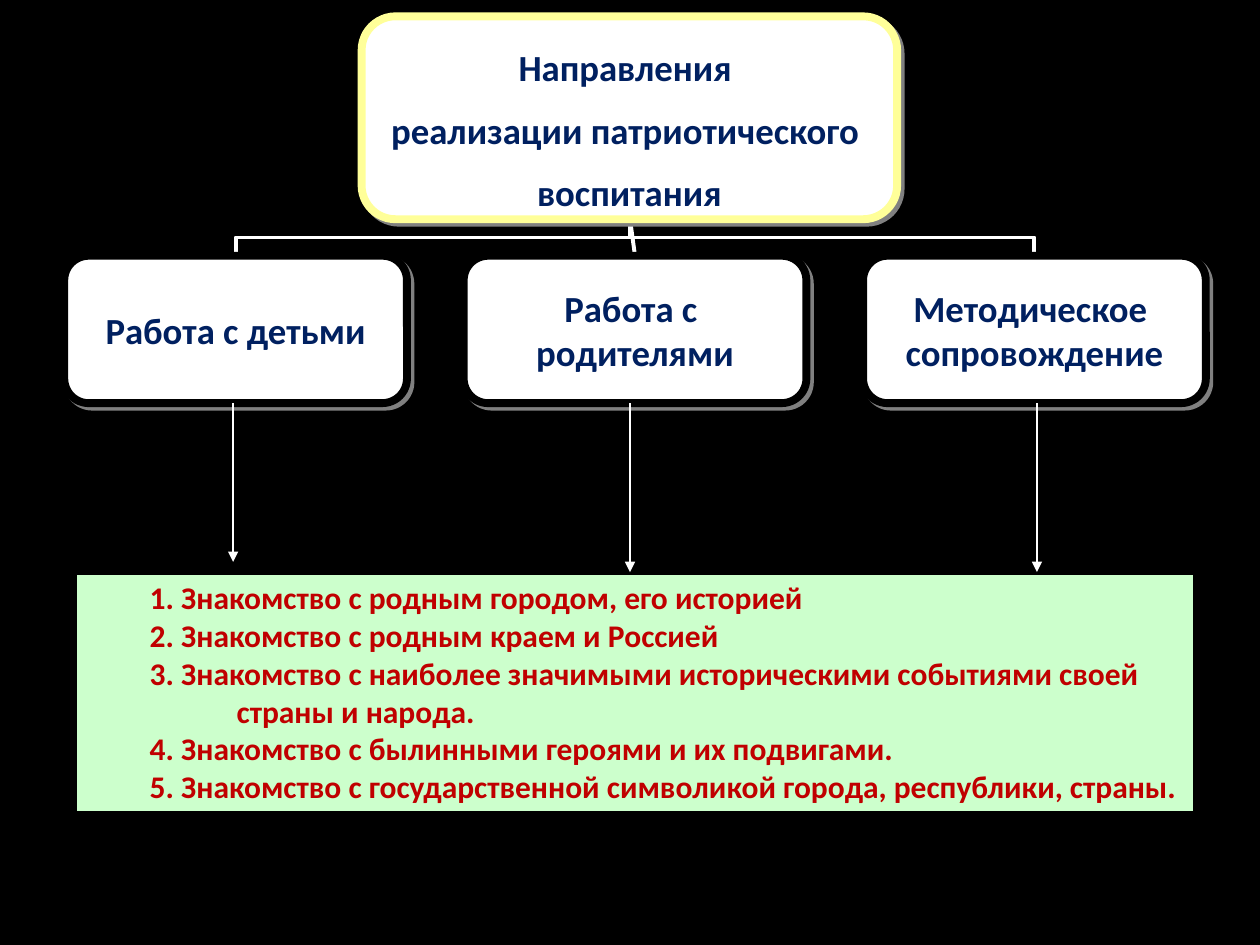
import pptx
import pptx.util
import pptx.dml.color
import pptx.enum.shapes
import pptx.enum.text
import pptx.oxml
import pptx.oxml.ns
from lxml import etree

# Content
TITLE = ["Направления ", "реализации патриотического ", "воспитания"]
BRANCHES = [
    ["Работа с детьми"],
    ["Работа с ", "родителями"],
    ["Методическое ", "сопровождение"],
]
TASKS = [
    "1. Знакомство с родным городом, его историей",
    "2. Знакомство с родным краем и Россией",
    "3. Знакомство с наиболее значимыми историческими событиями своей страны и народа.",
    "4. Знакомство с былинными героями и их подвигами.",
    "5. Знакомство с государственной символикой города, республики, страны.",
]

# Format
COLORS = {
    "black": "000000", "white": "FFFFFF", "yellow": "FFFF99", "gray": "808080",
    "navy": "002060", "green": "CCFFCC", "red": "C00000",
}
FONT = {"name": "Calibri", "bold": True}
CENTERED = {"alignment": pptx.enum.text.PP_ALIGN.CENTER}
BOX_FRAME = {
    "margin_left": 0, "margin_right": 0, "margin_top": 0, "margin_bottom": 0,
    "word_wrap": False, "vertical_anchor": pptx.enum.text.MSO_ANCHOR.MIDDLE,
}
LIST_FRAME = {
    "word_wrap": True, "vertical_anchor": pptx.enum.text.MSO_ANCHOR.TOP,
    "auto_size": pptx.enum.text.MSO_AUTO_SIZE.SHAPE_TO_FIT_TEXT,
}

# Layout, in inches
WIDTH, HEIGHT = 10, 7.5
TITLE_BOX = (2.87, 0.13, 4.25, 1.61)
BRANCH_LEFT, BRANCH_TOP, BRANCH_WIDTH, BRANCH_HEIGHT = 0.51, 2.03, 2.72, 1.17
BRANCH_PITCH = 3.17
LIST_BOX = (0.59, 4.54, 8.9, 1.92)
ARROWS = [(1.85, 4.46), (WIDTH / 2, LIST_BOX[1]), (8.23, LIST_BOX[1])]

Inches, Pt = pptx.util.Inches, pptx.util.Pt
SHAPES = pptx.enum.shapes.MSO_SHAPE
CONNECTORS = pptx.enum.shapes.MSO_CONNECTOR
qn = pptx.oxml.ns.qn


def color(name):
    return pptx.dml.color.RGBColor.from_string(COLORS[name])


def apply(target, values):
    for name, value in values.items():
        setattr(target, name, value)


def add_shadow(shape):
    effects = shape._element.spPr.find(qn("a:effectLst"))
    shadow = etree.SubElement(effects, qn("a:outerShdw"), dist=str(Pt(2.8)),
                              dir="2700000", algn="ctr", rotWithShape="0")
    etree.SubElement(shadow, qn("a:srgbClr"), val=COLORS["gray"])


def add_box(slide, kind, box, lines, fill, outline, weight, frame, text, size, paragraph_format):
    shape = slide.shapes.add_shape(kind, *map(Inches, box))
    shape.shadow.inherit = False
    shape.fill.solid()
    shape.fill.fore_color.rgb = color(fill)
    shape.line.color.rgb = color(outline)
    shape.line.width = Pt(weight)
    apply(shape.text_frame, frame)
    for index, line in enumerate(lines):
        paragraphs = shape.text_frame.paragraphs
        paragraph = paragraphs[0] if index == 0 else shape.text_frame.add_paragraph()
        values = dict(paragraph_format)
        indent = values.pop("indent", None)
        if index == 0:
            values.pop("space_before", None)
        apply(paragraph, values)
        if indent:
            for name, value in indent.items():
                paragraph._p.get_or_add_pPr().set(name, str(Inches(value)))
        run = paragraph.add_run()
        run.text = line
        apply(run.font, {**FONT, "size": Pt(size)})
        run.font.color.rgb = color(text)
    return shape


def add_line(slide, kind, begin, end, weight, arrow=False):
    connector = slide.shapes.add_connector(kind, *map(Inches, (*begin, *end)))
    connector.line.color.rgb = color("white")
    connector.line.width = Pt(weight)
    if arrow:
        etree.SubElement(connector.line._get_or_add_ln(), qn("a:tailEnd"), type="triangle")
    etree.SubElement(connector._element.spPr, qn("a:effectLst"))
    return connector


def add_branch_line(slide, child_x):
    parent_x, parent_bottom = WIDTH / 2, TITLE_BOX[1] + TITLE_BOX[3]
    across, down = child_x - parent_x, BRANCH_TOP - parent_bottom
    if abs(across) < 0.1:
        add_line(slide, CONNECTORS.STRAIGHT, (child_x, BRANCH_TOP), (parent_x, parent_bottom), 2.25)
        return
    # An elbow leaves sideways, so it is laid out on its side and turned upright
    side = 1 if across > 0 else -1
    middle_x, middle_y = parent_x + across / 2, parent_bottom + down / 2
    half_x, half_y = side * down / 2, abs(across) / 2
    connector = add_line(slide, CONNECTORS.ELBOW, (middle_x - half_x, middle_y + half_y),
                         (middle_x + half_x, middle_y - half_y), 2.25)
    turn = 270 if side > 0 else 90
    connector._element.spPr.find(qn("a:xfrm")).set("rot", str(turn * 60000))


def main():
    presentation = pptx.Presentation()
    presentation.slide_width, presentation.slide_height = Inches(WIDTH), Inches(HEIGHT)
    slide = presentation.slides.add_slide(presentation.slide_layouts[6])
    slide.background.fill.solid()
    slide.background.fill.fore_color.rgb = color("black")

    # Tree lines, behind the boxes
    lefts = [BRANCH_LEFT + column * BRANCH_PITCH for column in range(len(BRANCHES))]
    for left in lefts:
        add_branch_line(slide, left + BRANCH_WIDTH / 2)

    # Title and branches
    title_frame = {**BOX_FRAME, "margin_top": Inches(0.19)}
    title_paragraph = {**CENTERED, "space_before": Pt(10.5)}
    boxes = [(TITLE_BOX, TITLE, "yellow", title_frame, title_paragraph)]
    for left, lines in zip(lefts, BRANCHES):
        box = (left, BRANCH_TOP, BRANCH_WIDTH, BRANCH_HEIGHT)
        boxes.append((box, lines, "black", BOX_FRAME, CENTERED))
    for box, lines, outline, frame, paragraph_format in boxes:
        shape = add_box(slide, SHAPES.ROUNDED_RECTANGLE, box, lines, "white", outline, 4.5,
                        frame, "navy", 21, paragraph_format)
        add_shadow(shape)

    # Task list
    list_paragraph = {"alignment": pptx.enum.text.PP_ALIGN.LEFT,
                      "indent": {"marL": 1.19, "indent": -0.69}}
    add_box(slide, SHAPES.RECTANGLE, LIST_BOX, TASKS, "green", "black", 3,
            LIST_FRAME, "red", 18, list_paragraph)

    # Arrows from the branches to the list
    for x, end_y in ARROWS:
        add_line(slide, CONNECTORS.STRAIGHT, (x, BRANCH_TOP + BRANCH_HEIGHT), (x, end_y), 0.75,
                 arrow=True)

    presentation.save("out.pptx")


if __name__ == "__main__":
    main()
